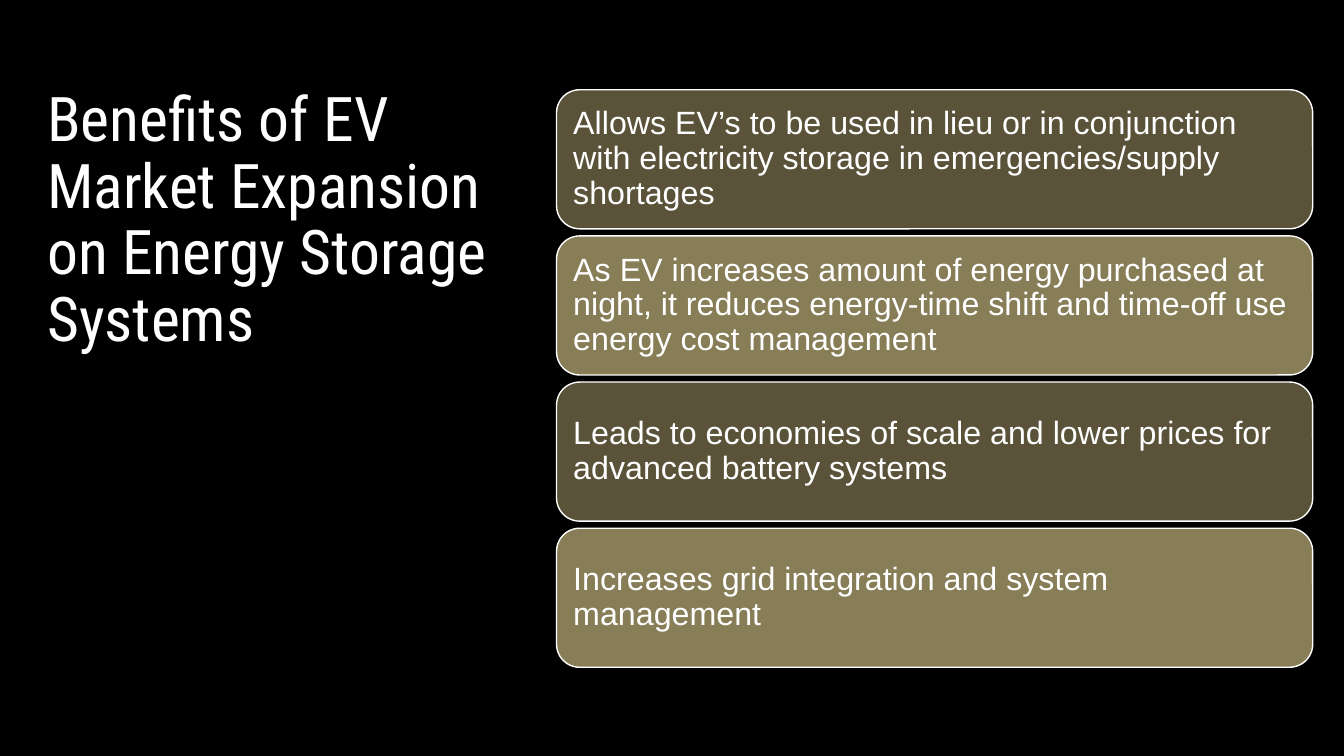
from pptx import Presentation
from pptx.dml.color import RGBColor
from pptx.enum.shapes import MSO_SHAPE
from pptx.enum.text import MSO_ANCHOR, PP_ALIGN
from pptx.util import Inches, Pt

ROUNDED = MSO_SHAPE.ROUNDED_RECTANGLE
MIDDLE, TOP = MSO_ANCHOR.MIDDLE, MSO_ANCHOR.TOP
LEFT = PP_ALIGN.LEFT

BLACK = RGBColor(0x00, 0x00, 0x00)
WHITE = RGBColor(0xFF, 0xFF, 0xFF)
DARK_OLIVE = RGBColor(0x5A, 0x53, 0x3A)
LIGHT_OLIVE = RGBColor(0x87, 0x7D, 0x56)
BAR_FILLS = [DARK_OLIVE, LIGHT_OLIVE]

TITLE = "Benefits of EV Market Expansion on Energy Storage Systems"
BENEFITS = [
    "Allows EV’s to be used in lieu or in conjunction with electricity "
    "storage in emergencies/supply shortages",
    "As EV increases amount of energy purchased at night, it reduces "
    "energy-time shift and time-off use energy cost management",
    "Leads to economies of scale and lower prices for advanced battery systems",
    "Increases grid integration and system management",
]

BAR_LEFT, BAR_TOP, BAR_WIDTH, BAR_HEIGHT = 5.52, 0.89, 7.5, 1.38
BAR_GAP = 0.07


def set_text(shape, text, font, size, anchor):
    tf = shape.text_frame
    tf.text = text
    tf.word_wrap = True
    tf.vertical_anchor = anchor
    p = tf.paragraphs[0]
    p.alignment = LEFT
    p.line_spacing = 0.9
    r = p.runs[0]
    r.font.name = font
    r.font.size = Pt(size)
    r.font.color.rgb = WHITE


def add_title(s):
    box = s.shapes.add_textbox(Inches(0.37), Inches(0.83), Inches(4.78), Inches(4.16))
    set_text(box, TITLE, "Roboto Condensed", 44, TOP)


def add_benefit(s, top, text, fill):
    bar = s.shapes.add_shape(
        ROUNDED, Inches(BAR_LEFT), Inches(top), Inches(BAR_WIDTH), Inches(BAR_HEIGHT)
    )
    bar.shadow.inherit = False
    bar.fill.solid()
    bar.fill.fore_color.rgb = fill
    bar.line.color.rgb = WHITE
    bar.line.width = Pt(1)
    set_text(bar, text, "Arial", 23, MIDDLE)
    tf = bar.text_frame
    tf.margin_left = tf.margin_right = tf.margin_top = tf.margin_bottom = Inches(0.1)


def main():
    prs = Presentation()
    prs.slide_width, prs.slide_height = Inches(13.33), Inches(7.5)
    s = prs.slides.add_slide(prs.slide_layouts[6])
    s.background.fill.solid()
    s.background.fill.fore_color.rgb = BLACK

    add_title(s)
    for i, text in enumerate(BENEFITS):
        top = BAR_TOP + i * (BAR_HEIGHT + BAR_GAP)
        add_benefit(s, top, text, BAR_FILLS[i % len(BAR_FILLS)])

    prs.save("out.pptx")


if __name__ == "__main__":
    main()
